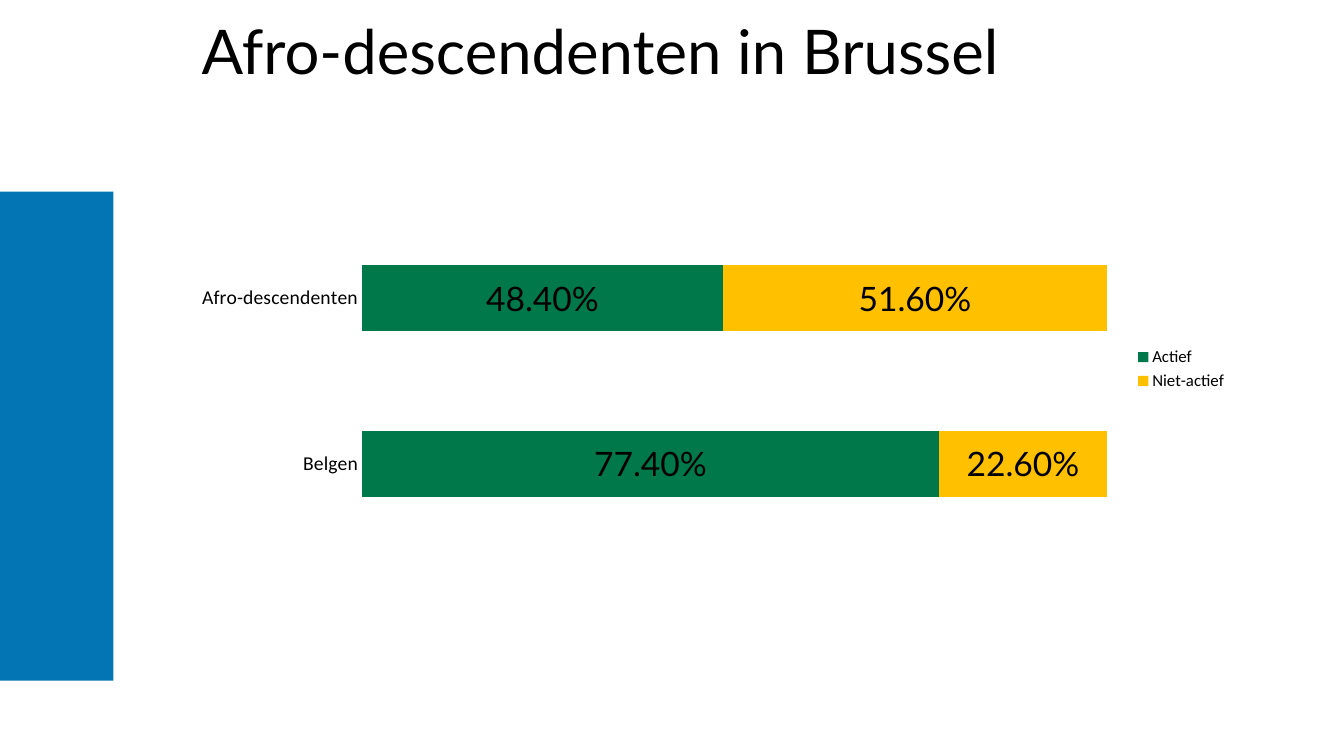
from lxml.etree import SubElement
from pptx import Presentation
from pptx.chart.data import CategoryChartData
from pptx.dml.color import RGBColor
from pptx.enum.chart import XL_CHART_TYPE, XL_LABEL_POSITION, XL_LEGEND_POSITION, XL_TICK_MARK
from pptx.enum.shapes import MSO_SHAPE
from pptx.enum.text import MSO_ANCHOR
from pptx.oxml.ns import qn
from pptx.util import Cm, Pt

BLUE = RGBColor(0x03, 0x75, 0xB4)
GREEN = RGBColor(0x00, 0x78, 0x49)
YELLOW = RGBColor(0xFF, 0xC0, 0x00)
BLACK = RGBColor(0, 0, 0)

TITLE = "Afro-descendenten in Brussel"
CATEGORIES = ["Belgen", "Afro-descendenten"]
SERIES = [
    ("Actief", [0.774, 0.484], GREEN),
    ("Niet-actief", [0.226, 0.516], YELLOW),
]
PERCENT = "0.00%"
PLOT_AREA = {"x": 0.163, "y": 0.067, "w": 0.712, "h": 0.933}
LEFT, TOP = Cm(4.83), Cm(4.83)


def set_font(font, size, name):
    font.size = Pt(size)
    font.name = name
    font.color.rgb = BLACK


def place_plot(chart):
    plot_area = chart._chartSpace.chart.plotArea
    for old in plot_area.findall(qn("c:layout")):
        plot_area.remove(old)
    layout = plot_area.makeelement(qn("c:layout"))
    plot_area.insert(0, layout)
    manual = SubElement(layout, qn("c:manualLayout"))
    settings = [("layoutTarget", "inner"), ("xMode", "edge"), ("yMode", "edge")]
    for tag, value in settings + list(PLOT_AREA.items()):
        SubElement(manual, qn(f"c:{tag}")).set("val", str(value))


def add_activity_chart(s):
    data = CategoryChartData(number_format=PERCENT)
    data.categories = CATEGORIES
    for name, values, _ in SERIES:
        data.add_series(name, values)
    chart = s.shapes.add_chart(
        XL_CHART_TYPE.BAR_STACKED_100, LEFT, TOP, Cm(26.37), Cm(8.94), data
    ).chart
    set_font(chart.font, 10, "Calibri")
    chart.has_title = False

    chart.has_legend = True
    chart.legend.position = XL_LEGEND_POSITION.RIGHT
    chart.legend.include_in_layout = False
    set_font(chart.legend.font, 12, "Calibri")

    axis = chart.category_axis
    axis.major_tick_mark = axis.minor_tick_mark = XL_TICK_MARK.NONE
    axis.format.line.fill.background()
    set_font(axis.tick_labels.font, 14, "Calibri")
    chart.value_axis.visible = False
    chart.value_axis.has_major_gridlines = False

    plot = chart.plots[0]
    plot.gap_width = 150
    plot.overlap = 100
    plot.vary_by_categories = False
    for series, (_, _, color) in zip(plot.series, SERIES):
        series.format.fill.solid()
        series.format.fill.fore_color.rgb = color
        labels = series.data_labels
        labels.show_value = True
        labels.position = XL_LABEL_POSITION.CENTER
        labels.number_format = PERCENT
        labels.number_format_is_linked = False
        set_font(labels.font, 24, "Lato")
    place_plot(chart)


prs = Presentation()
prs.slide_width, prs.slide_height = Cm(33.87), Cm(19.05)
s = prs.slides.add_slide(prs.slide_layouts[6])

band = s.shapes.add_shape(MSO_SHAPE.RECTANGLE, 0, TOP, Cm(2.86), Cm(12.32))
band.shadow.inherit = False
band.fill.solid()
band.fill.fore_color.rgb = BLUE
band.line.fill.background()

tf = s.shapes.add_textbox(LEFT, 0, Cm(27.79), Cm(2.74)).text_frame
tf.word_wrap = True
tf.vertical_anchor = MSO_ANCHOR.MIDDLE
p = tf.paragraphs[0]
p.text = TITLE
p.line_spacing = 0.9
set_font(p.font, 44, "Lato")

add_activity_chart(s)
prs.save("out.pptx")
